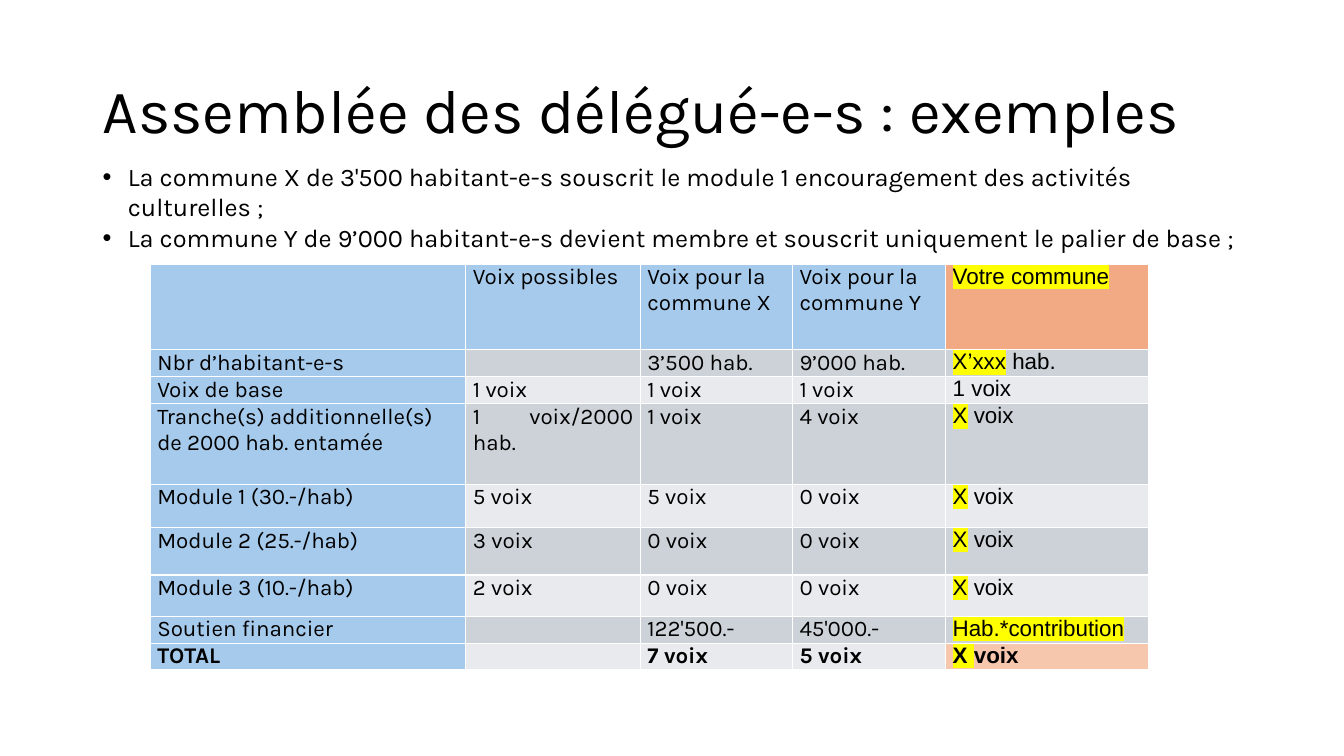
from dataclasses import dataclass

from lxml import etree
from pptx import Presentation
from pptx import util as u
from pptx.dml.color import RGBColor
from pptx.enum import text
from pptx.oxml.ns import qn

BLACK, YELLOW = "000000", "FFFF00"
BLUE, ORANGE, PEACH = "A6CAEC", "F2AA84", "F6C6AD"
BANDS = ("E8EAED", "CCD2D8")

COLUMN_WIDTHS = (3.13, 1.73, 1.51, 1.52, 2.01)
TITLE = "Assemblée des délégué-e-s : exemples"
EXAMPLES = (
    "La commune X de 3'500 habitant-e-s souscrit le module 1 encouragement des activités culturelles ;",
    "La commune Y de 9’000 habitant-e-s devient membre et souscrit uniquement le palier de base ;",
)


@dataclass
class VoteRow:
    """One table row; the last column is a highlighted blank plus plain text."""
    height: float
    label: str
    possible: str
    commune_x: str
    commune_y: str
    to_fill: str
    suffix: str = ""
    label_justified: bool = True


VOTE_ROWS = (
    VoteRow(0.85, "", "Voix possibles", "Voix pour la commune X",
            "Voix pour la commune Y", "Votre commune"),
    VoteRow(0.26, "Nbr d’habitant-e-s", "", "3’500 hab.", "9’000 hab.", "X’xxx", " hab."),
    VoteRow(0.26, "Voix de base", "1 voix", "1 voix", "1 voix", "", "1 voix"),
    VoteRow(0.8, "Tranche(s) additionnelle(s) de 2000 hab. entamée", "1 voix/2000 hab.",
            "1 voix", "4 voix", "X", " voix", False),
    VoteRow(0.43, "Module 1 (30.-/hab)", "5 voix", "5 voix", "0 voix", "X", " voix", False),
    VoteRow(0.47, "Module 2 (25.-/hab)", "3 voix", "0 voix", "0 voix", "X", " voix", False),
    VoteRow(0.41, "Module 3 (10.-/hab)", "2 voix", "0 voix", "0 voix", "X", " voix", False),
    VoteRow(0.26, "Soutien financier", "", "122'500.-", "45'000.-", "Hab.*contribution"),
    VoteRow(0.26, "TOTAL", "", "7 voix", "5 voix ", "X ", "voix"),
)


def color(hex_color: str) -> RGBColor:
    return RGBColor.from_string(hex_color)


def format_run(run, size: float, font: str = "Karla", bold: bool = False) -> None:
    run.font.size = u.Pt(size)
    run.font.name = font
    run.font.bold = bold
    run.font.color.rgb = color(BLACK)


def highlight(run) -> None:
    mark = etree.Element(qn("a:highlight"))
    etree.SubElement(mark, qn("a:srgbClr"), val=YELLOW)
    run.font._element.find(qn("a:solidFill")).addnext(mark)


def add_text_frame(slide, left: float, top: float, width: float, height: float):
    box = slide.shapes.add_textbox(*map(u.Inches, (left, top, width, height)))
    box.text_frame.word_wrap = True
    return box.text_frame


def add_title(slide) -> None:
    frame = add_text_frame(slide, 0.92, 0.4, 11.5, 1.45)
    frame.vertical_anchor = text.MSO_ANCHOR.MIDDLE
    frame.text = TITLE
    frame.paragraphs[0].line_spacing = 0.9
    format_run(frame.paragraphs[0].runs[0], 44)


def add_examples(slide) -> None:
    frame = add_text_frame(slide, 0.92, 1.55, 11.5, 1.07)
    frame.text = "\n".join(EXAMPLES)
    for example in frame.paragraphs:
        properties = example._p.get_or_add_pPr()
        properties.set("marL", str(u.Inches(0.25)))
        properties.set("indent", str(u.Inches(-0.25)))
        etree.SubElement(properties, qn("a:buFont"), typeface="Arial")
        etree.SubElement(properties, qn("a:buChar"), char="•")
        format_run(example.runs[0], 18.1)


def fill_color(row: int, column: int) -> str:
    if column == len(COLUMN_WIDTHS) - 1:
        if row == 0:
            return ORANGE
        if row == len(VOTE_ROWS) - 1:
            return PEACH
    return BLUE if row == 0 or column == 0 else BANDS[row % 2]


def write_cell(cell, content: str, suffix: str, own: bool, justified: bool, bold: bool) -> None:
    cell.margin_left = cell.margin_right = u.Inches(0.07)
    cell.margin_top = cell.margin_bottom = 0
    paragraph = cell.text_frame.paragraphs[0]
    paragraph.space_after = u.Pt(8)
    if justified:
        paragraph.alignment = text.PP_ALIGN.JUSTIFY
    for part, marked in ((content, own), (suffix, False)):
        if part:
            run = paragraph.add_run()
            run.text = part
            format_run(run, 16, "Arial" if own else "Karla", bold)
            if marked:
                highlight(run)
    if not paragraph.runs:
        # An empty cell keeps the text size, so that its row stays low
        etree.SubElement(paragraph._p, qn("a:endParaRPr"), sz="1600")


def add_vote_table(slide) -> None:
    table = slide.shapes.add_table(
        len(VOTE_ROWS), len(COLUMN_WIDTHS),
        *map(u.Inches, (1.49, 2.62, sum(COLUMN_WIDTHS), 4.09))).table
    for column, width in zip(table.columns, COLUMN_WIDTHS):
        column.width = u.Inches(width)
    last_row, last_column = len(VOTE_ROWS) - 1, len(COLUMN_WIDTHS) - 1
    for r, vote in enumerate(VOTE_ROWS):
        table.rows[r].height = u.Inches(vote.height)
        contents = (vote.label, vote.possible, vote.commune_x, vote.commune_y, vote.to_fill)
        for c, content in enumerate(contents):
            cell = table.cell(r, c)
            cell.fill.solid()
            cell.fill.fore_color.rgb = color(fill_color(r, c))
            own = c == last_column
            write_cell(cell, content, vote.suffix if own else "", own,
                       r > 0 and (c > 0 or vote.label_justified), r == last_row)


def main() -> None:
    deck = Presentation()
    deck.slide_width, deck.slide_height = u.Inches(13.33), u.Inches(7.5)
    slide = deck.slides.add_slide(deck.slide_layouts[6])
    add_title(slide)
    add_examples(slide)
    add_vote_table(slide)
    deck.save("out.pptx")


if __name__ == "__main__":
    main()
